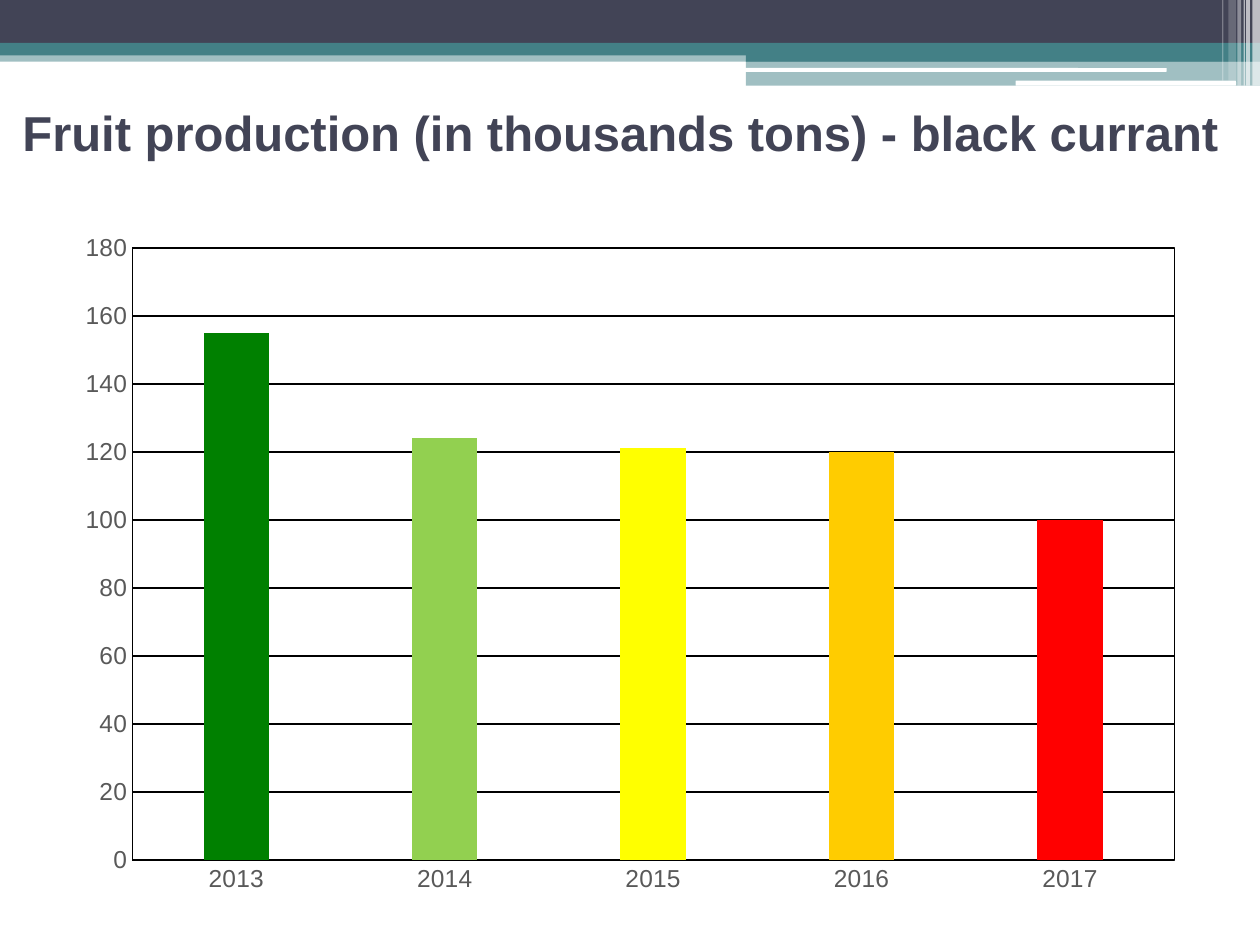
from lxml import etree
from pptx import Presentation
from pptx.chart.data import CategoryChartData
from pptx.dml.color import RGBColor
from pptx.enum.chart import XL_CHART_TYPE, XL_TICK_MARK
from pptx.enum.shapes import MSO_SHAPE
from pptx.enum.text import MSO_ANCHOR
from pptx.oxml import parse_xml
from pptx.oxml.ns import nsdecls, qn
from pptx.util import Inches, Pt

RECT = MSO_SHAPE.RECTANGLE
ROUNDED = MSO_SHAPE.ROUNDED_RECTANGLE
COLUMNS = XL_CHART_TYPE.COLUMN_CLUSTERED
NO_TICK = XL_TICK_MARK.NONE
MIDDLE = MSO_ANCHOR.MIDDLE

NAVY = RGBColor(0x42, 0x44, 0x56)
TEAL = RGBColor(0x43, 0x80, 0x86)
WHITE = RGBColor(0xFF, 0xFF, 0xFF)
BLACK = RGBColor(0x00, 0x00, 0x00)
GREY = RGBColor(0x59, 0x59, 0x59)
SERIES_VIOLET = RGBColor(0x53, 0x54, 0x8A)
GREEN = RGBColor(0x00, 0x80, 0x00)
LIME = RGBColor(0x92, 0xD0, 0x50)
YELLOW = RGBColor(0xFF, 0xFF, 0x00)
AMBER = RGBColor(0xFF, 0xCC, 0x00)
RED = RGBColor(0xFF, 0x00, 0x00)

HEADER_BANDS = [
    (RECT, 0, 0.4, 10, 0.09, TEAL, 50),
    (RECT, 0, 0, 10, 0.34, NAVY, 100),
    (RECT, 0, 0.34, 10, 0.1, TEAL, 100),
    (RECT, 5.92, 0.39, 4.08, 0.1, TEAL, 100),
    (RECT, 5.92, 0.48, 4.08, 0.2, TEAL, 50),
    (ROUNDED, 5.91, 0.54, 3.35, 0.03, WHITE, 100),
    (ROUNDED, 8.06, 0.64, 1.75, 0.04, WHITE, 100),
]
CORNER_STRIPES = [
    (9.94, 0.06, 0.68, 65),
    (9.89, 0.03, 0.68, 65),
    (9.87, 0.01, 0.68, 60),
    (9.82, 0.03, 0.68, 40),
    (9.75, 0.06, 0.64, 20),
    (9.7, 0.01, 0.64, 30),
]
PRODUCTION = [
    ("2013", 155, GREEN),
    ("2014", 124, LIME),
    ("2015", 121, YELLOW),
    ("2016", 120, AMBER),
    ("2017", 100, RED),
]


def add_band(slide, preset, left, top, width, height, color, opacity):
    """Add a borderless filled band, opacity in percent."""
    band = slide.shapes.add_shape(
        preset, Inches(left), Inches(top), Inches(width), Inches(height))
    band.shadow.inherit = False
    band.line.fill.background()
    band.fill.solid()
    band.fill.fore_color.rgb = color
    if opacity < 100:
        tint = band.fill._xPr.find(".//" + qn("a:srgbClr"))
        etree.SubElement(tint, qn("a:alpha"), val=str(opacity * 1000))


def add_title(slide, wording):
    """Add the slide heading."""
    heading = slide.shapes.add_textbox(
        Inches(0.08), Inches(0.67), Inches(9.75), Inches(0.75))
    frame = heading.text_frame
    frame.word_wrap = True
    frame.vertical_anchor = MIDDLE
    run = frame.paragraphs[0].add_run()
    run.text = wording
    run.font.name = "Arial"
    run.font.size = Pt(28)
    run.font.bold = True
    run.font.color.rgb = NAVY


def style_font(font, name, size, color):
    """Set the face, size and colour of a font."""
    font.name = name
    font.size = Pt(size)
    font.color.rgb = color


def style_line(line):
    """Make a line thin and black."""
    line.color.rgb = BLACK
    line.width = Pt(0.75)


def frame_plot(chart):
    """Fix the inner plot position and outline it in black."""
    plot_area = chart._chartSpace.chart.plotArea
    for layout in plot_area.findall(qn("c:layout")):
        plot_area.remove(layout)
    plot_area.insert(0, parse_xml(
        f'<c:layout {nsdecls("c")}><c:manualLayout>'
        '<c:layoutTarget val="inner"/>'
        '<c:xMode val="edge"/><c:yMode val="edge"/>'
        '<c:x val="0.061"/><c:y val="0.04"/>'
        '<c:w val="0.919"/><c:h val="0.893"/>'
        '</c:manualLayout></c:layout>'))
    plot_area.append(parse_xml(
        f'<c:spPr {nsdecls("c", "a")}><a:noFill/><a:ln w="9525">'
        f'<a:solidFill><a:srgbClr val="{BLACK}"/></a:solidFill>'
        '</a:ln></c:spPr>'))


def add_production_chart(slide):
    """Add the column chart with one colour per year."""
    data = CategoryChartData()
    data.categories = [year for year, _, _ in PRODUCTION]
    data.add_series("Series 1", [tons for _, tons, _ in PRODUCTION])
    chart = slide.shapes.add_chart(
        COLUMNS, Inches(0.5), Inches(1.75), Inches(9), Inches(5.44), data).chart
    chart.has_legend = False
    chart.has_title = False
    style_font(chart.font, "Cambria", 10, BLACK)

    years, tonnage = chart.category_axis, chart.value_axis
    for axis in (years, tonnage):
        axis.major_tick_mark = NO_TICK
        axis.minor_tick_mark = NO_TICK
        style_font(axis.tick_labels.font, "Arial", 14, GREY)
    style_line(years.format.line)
    tonnage.format.line.fill.background()
    tonnage.minimum_scale, tonnage.maximum_scale = 0, 180
    tonnage.major_unit = 20
    tonnage.has_major_gridlines = True
    style_line(tonnage.major_gridlines.format.line)

    plot = chart.plots[0]
    plot.gap_width = 219
    plot.overlap = -27
    plot.vary_by_categories = False
    columns = plot.series[0]
    columns.format.fill.solid()
    columns.format.fill.fore_color.rgb = SERIES_VIOLET
    for index, (_, _, color) in enumerate(PRODUCTION):
        fill = columns.points[index].format.fill
        fill.solid()
        fill.fore_color.rgb = color
    frame_plot(chart)


def main():
    """Build and save the slide."""
    deck = Presentation()
    deck.slide_width, deck.slide_height = Inches(10), Inches(7.5)
    slide = deck.slides.add_slide(deck.slide_layouts[6])
    for band in HEADER_BANDS:
        add_band(slide, *band)
    for left, width, height, opacity in CORNER_STRIPES:
        add_band(slide, RECT, left, 0, width, height, WHITE, opacity)
    add_title(slide, "Fruit production (in thousands tons) - black currant")
    add_production_chart(slide)
    deck.save("out.pptx")


if __name__ == "__main__":
    main()
